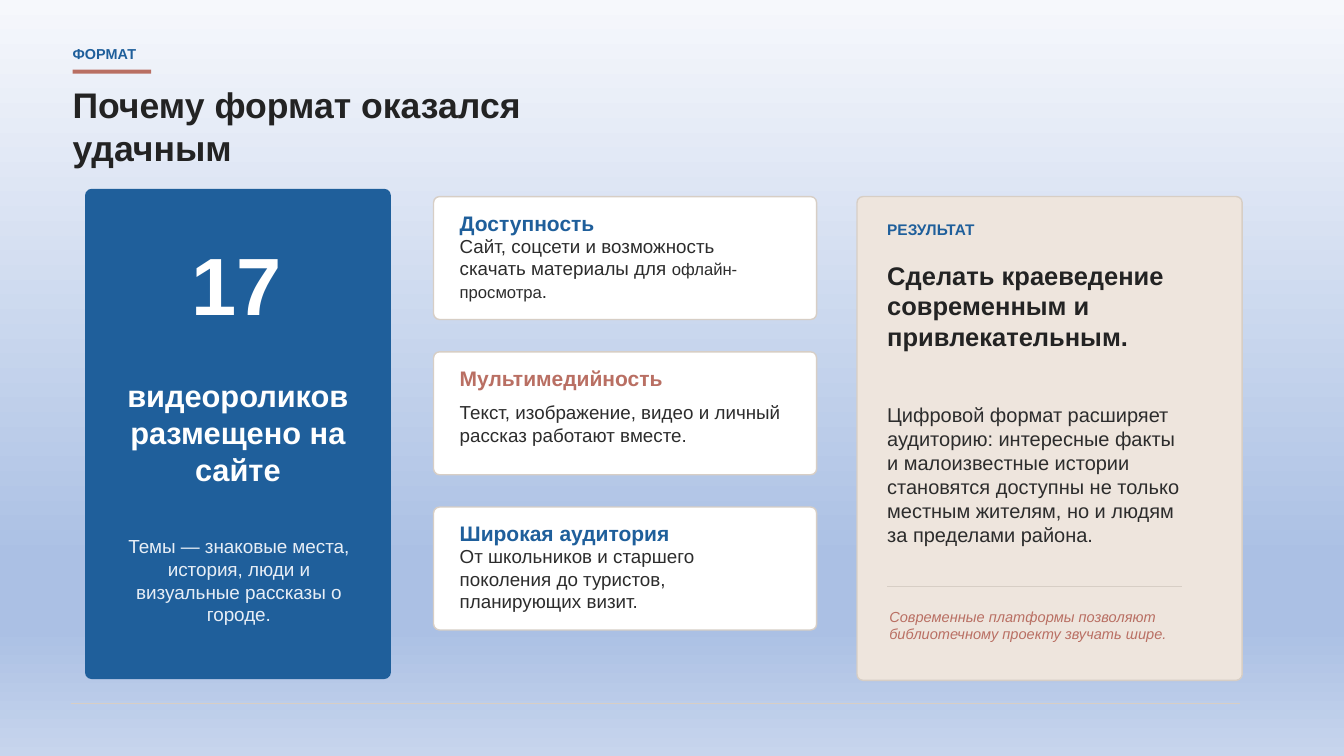
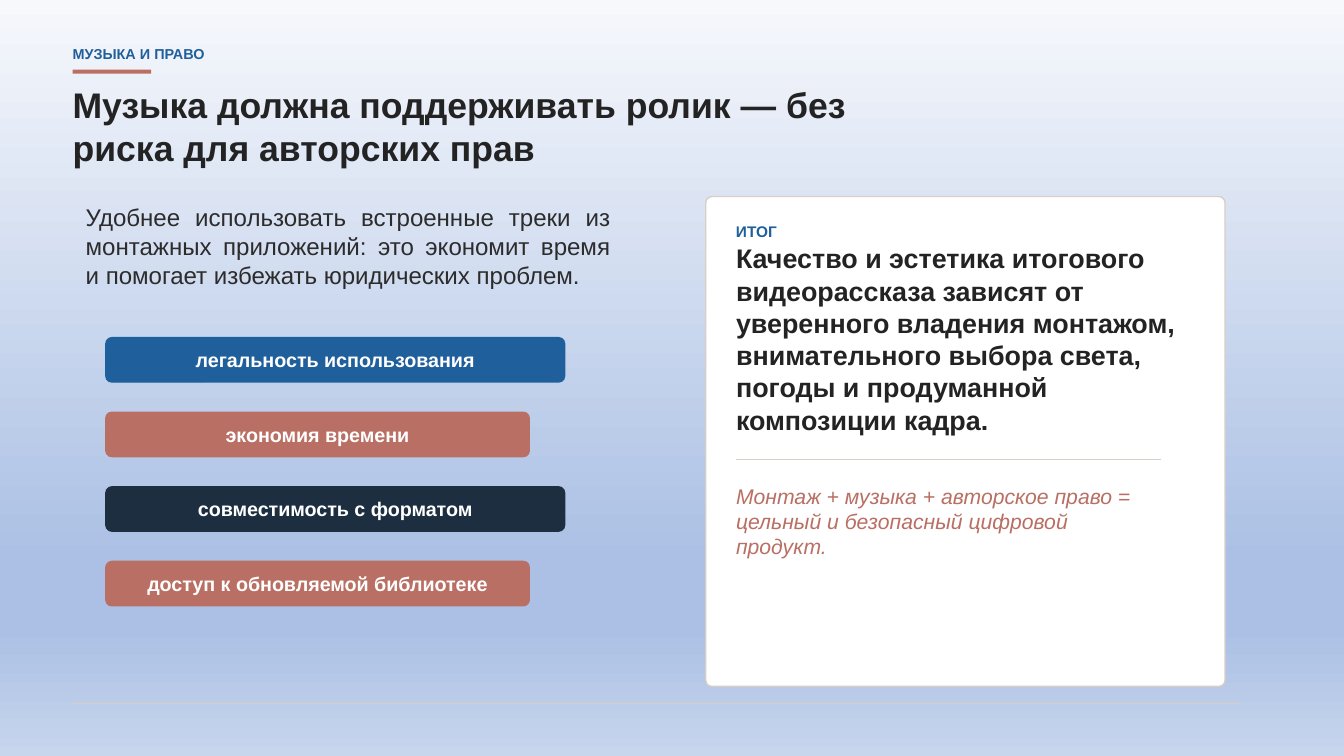
import pptx
import pptx.dml.color
import pptx.enum.shapes
import pptx.enum.text
import pptx.oxml.ns
import pptx.util
from lxml import etree

Inches = pptx.util.Inches
RGBColor = pptx.dml.color.RGBColor
Align = pptx.enum.text.PP_ALIGN
Shape = pptx.enum.shapes.MSO_SHAPE
qn = pptx.oxml.ns.qn

FONT = "Arial"
BLUE = RGBColor(0x1F, 0x5F, 0x9B)
CLAY = RGBColor(0xB9, 0x6F, 0x63)
NAVY = RGBColor(0x1D, 0x2E, 0x40)
INK = RGBColor(0x23, 0x23, 0x23)
BODY = RGBColor(0x2C, 0x2C, 0x2C)
WHITE = RGBColor(0xFF, 0xFF, 0xFF)
PALE_BLUE = RGBColor(0xE7, 0xEE, 0xF6)
SAND = RGBColor(0xEE, 0xE5, 0xDD)
RULE = RGBColor(0xD7, 0xCE, 0xC5)
SKY_TOP = RGBColor(0xF6, 0xF8, 0xFC)
SKY_DEEP = RGBColor(0xAB, 0xC0, 0xE4)
SKY_BOTTOM = RGBColor(0xC7, 0xD5, 0xED)
SKY_STOPS = [(0, SKY_TOP), (74, SKY_DEEP), (83, SKY_DEEP), (100, SKY_BOTTOM)]


def paint_sky(master):
    fill = master.background.fill
    fill.gradient()
    fill.gradient_angle = 270
    stops = next(master.element.iter(qn("a:gsLst")))
    for stop in list(stops):
        stops.remove(stop)
    for percent, color in SKY_STOPS:
        stop = etree.SubElement(stops, qn("a:gs"), pos=str(percent * 1000))
        etree.SubElement(stop, qn("a:srgbClr"), val=str(color))


def write(frame, paragraphs, size, color, bold=False, italic=False, align=Align.LEFT):
    frame.word_wrap = True
    frame.vertical_anchor = pptx.enum.text.MSO_ANCHOR.MIDDLE
    frame.margin_left = frame.margin_right = frame.margin_top = frame.margin_bottom = 0
    for index, runs in enumerate(paragraphs):
        paragraph = frame.add_paragraph() if index else frame.paragraphs[0]
        paragraph.alignment = align
        for words, run_size in runs:
            run = paragraph.add_run()
            run.text = words
            run.font.name = FONT
            run.font.size = pptx.util.Pt(run_size or size)
            run.font.bold = bold
            run.font.italic = italic
            run.font.color.rgb = color


def add_text(slide, left, top, width, height, *paragraphs, **style):
    box = slide.shapes.add_textbox(Inches(left), Inches(top), Inches(width), Inches(height))
    runs = [[(p, None)] if isinstance(p, str) else p for p in paragraphs]
    write(box.text_frame, runs, **style)


def add_panel(slide, left, top, width, height, fill, line=None, radius=0.06):
    kind = Shape.ROUNDED_RECTANGLE if radius else Shape.RECTANGLE
    panel = slide.shapes.add_shape(kind, Inches(left), Inches(top), Inches(width), Inches(height))
    panel.shadow.inherit = False
    panel.fill.solid()
    panel.fill.fore_color.rgb = fill
    if radius:
        panel.adjustments[0] = radius / min(width, height)
    if line is None:
        panel.line.fill.background()
    else:
        panel.line.color.rgb = line
        panel.line.width = pptx.util.Pt(1)
    return panel


def add_rule(slide, left, top, width):
    rule = slide.shapes.add_connector(
        pptx.enum.shapes.MSO_CONNECTOR.STRAIGHT,
        Inches(left), Inches(top), Inches(left + width), Inches(top))
    rule.line.color.rgb = RULE
    rule.line.width = pptx.util.Pt(1)
    etree.SubElement(rule._element.spPr, qn("a:effectLst"))


def new_slide(prs, section, title, title_width):
    slide = prs.slides.add_slide(prs.slide_layouts[6])
    add_text(slide, 0.72, 0.44, 1.7, 0.18, section, size=10.3, color=BLUE, bold=True)
    add_panel(slide, 0.72, 0.69, 0.78, 0.04, CLAY, radius=0)
    add_text(slide, 0.72, 0.86, title_width, 0.78, title, size=25.4, color=INK, bold=True)
    add_rule(slide, 0.7, 6.98, 11.6)
    return slide


def video_count_panel(slide, left, top, width, height):
    add_panel(slide, left, top, width, height, BLUE, BLUE)
    add_text(slide, left + 0.4, top + 0.4, 2.2, 1.05, "17",
             size=58, color=WHITE, bold=True, align=Align.CENTER)
    add_text(slide, left + 0.23, top + 2.04, 2.56, 0.74, "видеороликов", "размещено на сайте",
             size=22, color=WHITE, bold=True, align=Align.CENTER)
    add_text(slide, left + 0.31, top + 3.5, 2.42, 0.75,
             "Темы — знаковые места, история, люди и визуальные рассказы о городе.",
             size=13.5, color=PALE_BLUE, align=Align.CENTER)


def reason_card(slide, left, top, width, height, heading, color, body):
    add_panel(slide, left, top, width, height, WHITE, RULE)
    add_text(slide, left + 0.26, top + 0.18, 3.2, 0.16, heading, size=15, color=color, bold=True)
    add_text(slide, left + 0.26, top + 0.44, 3.2, 0.54, body, size=13.4, color=BODY)


def result_panel(slide, left, top, width, height):
    add_panel(slide, left, top, width, height, SAND, RULE)
    inner = left + 0.3
    add_text(slide, inner, top + 0.25, 1, 0.16, "РЕЗУЛЬТАТ", size=11, color=BLUE, bold=True)
    add_text(slide, inner, top + 0.63, 3, 0.9,
             "Сделать краеведение современным и привлекательным.",
             size=18.2, color=INK, bold=True)
    add_text(slide, inner, top + 2.03, 3, 1.45,
             "Цифровой формат расширяет аудиторию: интересные факты и малоизвестные истории "
             "становятся доступны не только местным жителям, но и людям за пределами района.",
             size=14.3, color=BODY)
    add_rule(slide, inner, top + 3.87, 2.92)
    add_text(slide, inner + 0.02, top + 4.04, 2.88, 0.42,
             "Современные платформы позволяют библиотечному проекту звучать шире.",
             size=10.4, color=CLAY, italic=True)


def benefit_pills(slide, left, top):
    benefits = [
        ("легальность использования", BLUE, 4.55),
        ("экономия времени", CLAY, 4.2),
        ("совместимость с форматом", NAVY, 4.55),
        ("доступ к обновляемой библиотеке", CLAY, 4.2),
    ]
    for row, (benefit, color, width) in enumerate(benefits):
        pill = add_panel(slide, left, top + row * 0.74, width, 0.44, color, color)
        write(pill.text_frame, [[(benefit, None)]],
              size=14.1, color=WHITE, bold=True, align=Align.CENTER)


def summary_panel(slide, left, top, width, height):
    add_panel(slide, left, top, width, height, WHITE, RULE)
    inner = left + 0.3
    add_text(slide, inner, top + 0.27, 0.8, 0.16, "ИТОГ", size=11, color=BLUE, bold=True)
    add_text(slide, inner, top + 0.65, 4.45, 1.52,
             "Качество и эстетика итогового видеорассказа зависят от уверенного владения "
             "монтажом, внимательного выбора света, погоды и продуманной композиции кадра.",
             size=19.2, color=INK, bold=True)
    add_rule(slide, inner, top + 2.61, 4.22)
    add_text(slide, inner, top + 2.91, 4.15, 0.62,
             "Монтаж + музыка + авторское право = цельный и безопасный цифровой продукт.",
             size=15.1, color=CLAY, italic=True)


def format_slide(prs):
    slide = new_slide(prs, "ФОРМАТ", "Почему формат оказался удачным", 6)
    video_count_panel(slide, 0.85, 1.88, 3.02, 4.85)
    reasons = [
        ("Доступность", BLUE,
         [("Сайт, соцсети и возможность скачать материалы для ", None),
          ("офлайн-просмотра", 11.9), (".", None)]),
        ("Мультимедийность", CLAY,
         "Текст, изображение, видео и личный рассказ работают вместе."),
        ("Широкая аудитория", BLUE,
         "От школьников и старшего поколения до туристов, планирующих визит."),
    ]
    for row, reason in enumerate(reasons):
        reason_card(slide, 4.3, 1.95 + row * 1.54, 3.8, 1.22, *reason)
    result_panel(slide, 8.5, 1.95, 3.82, 4.8)


def music_slide(prs):
    slide = new_slide(prs, "МУЗЫКА И ПРАВО",
                      "Музыка должна поддерживать ролик — без риска для авторских прав", 8.15)
    add_text(slide, 0.85, 1.95, 5.2, 0.98,
             "Удобнее использовать встроенные треки из монтажных приложений: "
             "это экономит время и помогает избежать юридических проблем.",
             size=17.2, color=BODY, align=Align.JUSTIFY)
    benefit_pills(slide, 1.05, 3.35)
    summary_panel(slide, 7, 1.95, 5.15, 4.86)


def main():
    prs = pptx.Presentation()
    prs.slide_width = Inches(13.33)
    prs.slide_height = Inches(7.5)
    paint_sky(prs.slide_master)
    format_slide(prs)
    music_slide(prs)
    prs.save("out.pptx")


if __name__ == "__main__":
    main()
